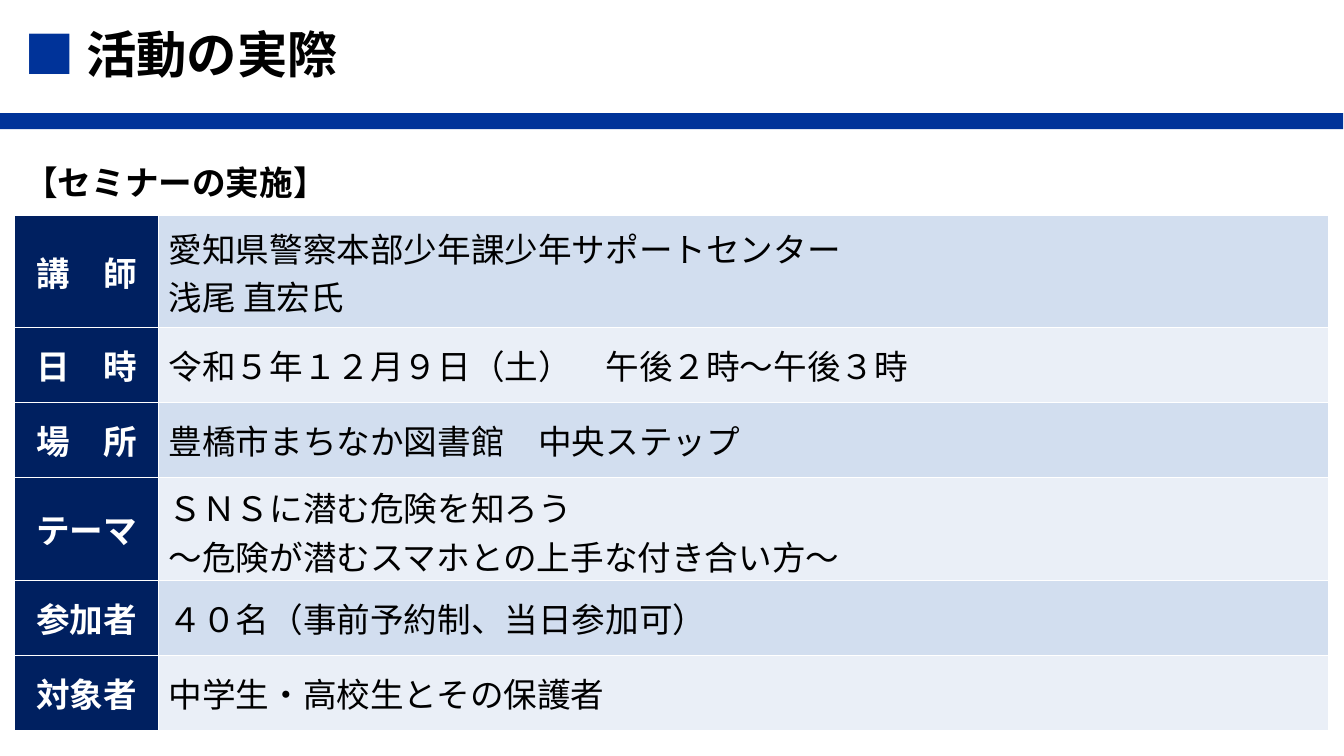
from pptx import Presentation
from pptx.dml.color import RGBColor
from pptx.enum.shapes import MSO_SHAPE as Shape
from pptx.enum.text import MSO_ANCHOR as Anchor, PP_ALIGN as Align
from pptx.oxml import parse_xml
from pptx.oxml.ns import nsdecls
from pptx.util import Pt

BLUE, NAVY, WHITE, BLACK = "003399", "002060", "FFFFFF", "000000"
BANDS = ["D2DEEF", "EAEFF7"]
SEMINAR = [
    (80, "講　師", "愛知県警察本部少年課少年サポートセンター\n浅尾 直宏氏"),
    (53.5, "日　時", "令和５年１２月９日（土）　午後２時～午後３時"),
    (53.5, "場　所", "豊橋市まちなか図書館　中央ステップ"),
    (73.5, "テーマ", "ＳＮＳに潜む危険を知ろう\n～危険が潜むスマホとの上手な付き合い方～"),
    (53.5, "参加者", "４０名（事前予約制、当日参加可）"),
    (53.5, "対象者", "中学生・高校生とその保護者"),
]


def color(value):
    return RGBColor.from_string(value)


class SlideBuilder:
    font = "Noto Sans CJK JP"

    def __init__(self, page):
        self.page = page

    def style(self, span, size, ink, bold):
        span.font.size = Pt(size)
        span.font.bold = bold
        span.font.color.rgb = color(ink)
        span.font.name = self.font
        span.font._element.append(
            parse_xml(f'<a:ea {nsdecls("a")} typeface="{self.font}"/>'))

    def bar(self, left, top, width, height, fill):
        shape = self.page.shapes.add_shape(
            Shape.RECTANGLE, Pt(left), Pt(top), Pt(width), Pt(height))
        shape.shadow.inherit = False
        shape.fill.solid()
        shape.fill.fore_color.rgb = color(fill)
        shape.line.fill.background()

    def text(self, left, top, width, height, parts, size, anchor=Anchor.TOP):
        box = self.page.shapes.add_textbox(Pt(left), Pt(top), Pt(width), Pt(height))
        frame = box.text_frame
        frame.word_wrap = True
        frame.vertical_anchor = anchor
        para = frame.paragraphs[0]
        para.line_spacing = 0.9
        for words, ink in parts:
            span = para.add_run()
            span.text = words
            self.style(span, size, ink, True)

    def cell(self, cell, words, fill, ink, bold, align):
        for side in ("lnL", "lnR", "lnT", "lnB"):
            cell._tc.get_or_add_tcPr().append(parse_xml(
                f'<a:{side} {nsdecls("a")} w="12700"><a:solidFill>'
                f'<a:srgbClr val="{WHITE}"/></a:solidFill></a:{side}>'))
        cell.fill.solid()
        cell.fill.fore_color.rgb = color(fill)
        cell.vertical_anchor = Anchor.MIDDLE
        cell.text_frame.text = words
        for para in cell.text_frame.paragraphs:
            para.alignment = align
            for span in para.runs:
                self.style(span, 24, ink, bold)

    def table(self, left, top, widths, rows):
        height = sum(row[0] for row in rows)
        table = self.page.shapes.add_table(
            len(rows), len(widths), Pt(left), Pt(top), Pt(sum(widths)), Pt(height)).table
        table.first_row = table.horz_banding = False
        for column, width in zip(table.columns, widths):
            column.width = Pt(width)
        for index, (row_height, label, detail) in enumerate(rows):
            table.rows[index].height = Pt(row_height)
            self.cell(table.cell(index, 0), label, NAVY, WHITE, True, Align.CENTER)
            self.cell(table.cell(index, 1), detail, BANDS[index % 2], BLACK, False, Align.LEFT)


def main():
    deck = Presentation()
    deck.slide_width, deck.slide_height = Pt(960), Pt(540)
    builder = SlideBuilder(deck.slides.add_slide(deck.slide_layouts[6]))
    builder.bar(-2, 80.8, 961.5, 11.5, BLUE)
    builder.text(10.3, 0, 720, 81.5, [("■ ", BLUE), ("活動の実際", BLACK)], 36, Anchor.MIDDLE)
    builder.text(10.3, 115.2, 938.5, 417, [("【セミナーの実施】", BLACK)], 24)
    builder.table(10.3, 154.2, [103, 835.5], SEMINAR)
    deck.save("out.pptx")


if __name__ == "__main__":
    main()
